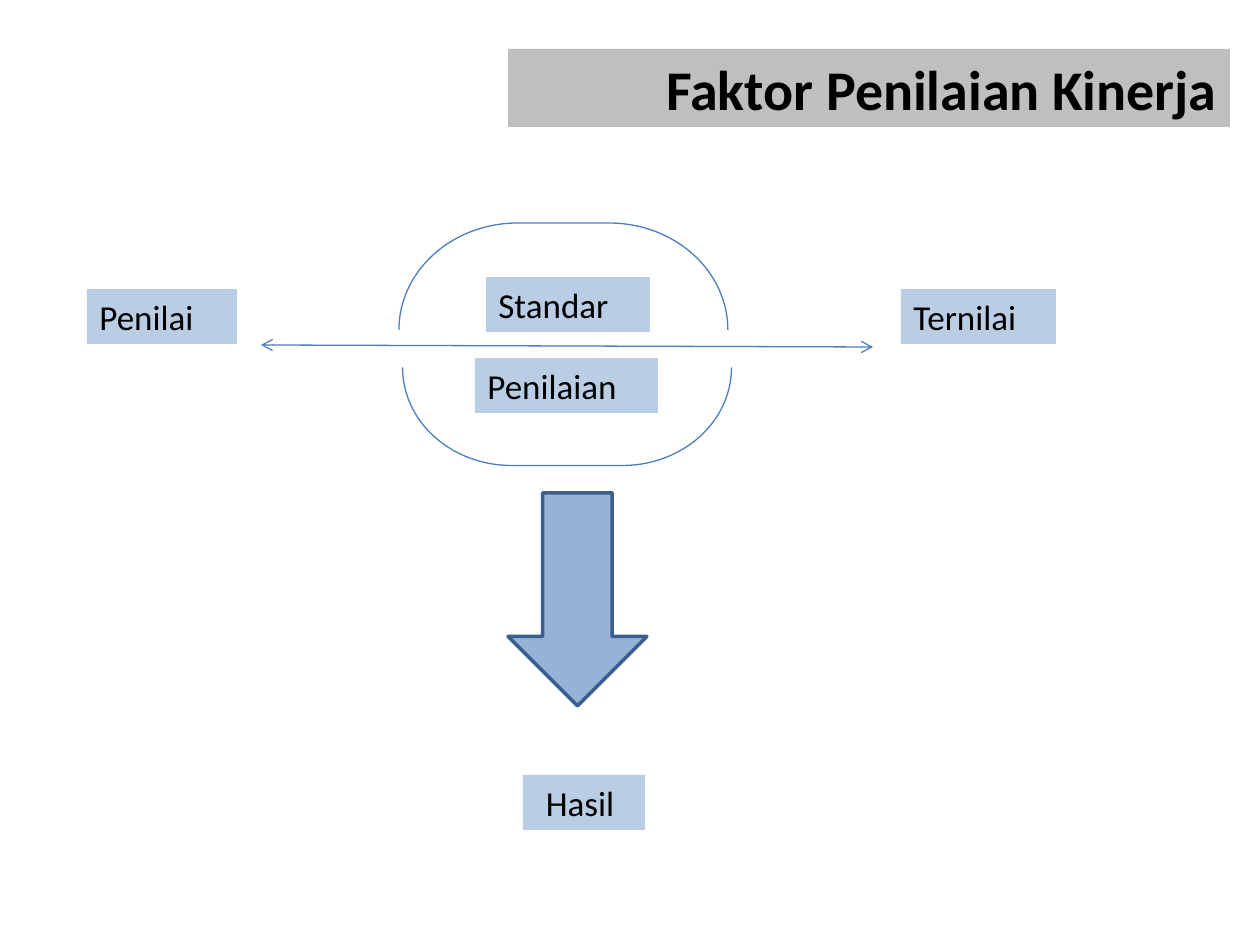
from pptx import Presentation
from pptx import util as u
from pptx.dml.color import RGBColor
from pptx.enum import shapes, text
from pptx.oxml.ns import qn
from lxml import etree

PX = 914400 / 126
FONT = "Calibri"
BLACK = RGBColor(0x00, 0x00, 0x00)
GREY = RGBColor(0xBF, 0xBF, 0xBF)
PALE_BLUE = RGBColor(0xB9, 0xCD, 0xE5)
MID_BLUE = RGBColor(0x95, 0xB3, 0xD7)
LINE_BLUE = RGBColor(0x4B, 0x7E, 0xBC)
DARK_BLUE = RGBColor(0x3A, 0x5F, 0x8C)
LABEL_HEIGHT = 55
BRACKET_SPAN = 329


def px(*lengths):
    return [u.Emu(round(length * PX)) for length in lengths]


def add_label(page, words, left, top, width, height=LABEL_HEIGHT, fill=PALE_BLUE,
              size=20, bold=False, align=text.PP_ALIGN.LEFT):
    box = page.shapes.add_textbox(*px(left, top, width, height))
    box.fill.solid()
    box.fill.fore_color.rgb = fill
    frame = box.text_frame
    frame.word_wrap = True
    frame.vertical_anchor = text.MSO_ANCHOR.MIDDLE
    para = frame.paragraphs[0]
    para.text = words
    para.alignment = align
    font = para.font
    font.name, font.size, font.bold = FONT, u.Pt(size), bold
    font.color.rgb = BLACK


def set_line(item, color, width):
    item.line.color.rgb = color
    item.line.width = u.Pt(width)


def add_double_arrow(page, x1, y1, x2, y2):
    arrow = page.shapes.add_connector(shapes.MSO_CONNECTOR.STRAIGHT, *px(x1, y1, x2, y2))
    set_line(arrow, LINE_BLUE, 0.75)
    for end in ("a:headEnd", "a:tailEnd"):
        etree.SubElement(arrow.line._get_or_add_ln(), qn(end), type="arrow")
    etree.SubElement(arrow._element.spPr, qn("a:effectLst"))


def add_bracket(page, left, top, depth, opens_down=False):
    """Draw a quarter-turned bracket; left and top are those before turning."""
    bracket = page.shapes.add_shape(
        shapes.MSO_SHAPE.RIGHT_BRACKET, *px(left, top, depth, BRACKET_SPAN))
    bracket.adjustments[0] = 1.11
    bracket.rotation = 90
    if opens_down:
        bracket._element.spPr.find(qn("a:xfrm")).set("flipH", "1")
    bracket.shadow.inherit = False
    bracket.fill.background()
    set_line(bracket, LINE_BLUE, 0.75)


def add_down_arrow(page, left, top, width, height):
    arrow = page.shapes.add_shape(
        shapes.MSO_SHAPE.DOWN_ARROW, *px(left, top, width, height))
    arrow.shadow.inherit = False
    arrow.fill.solid()
    arrow.fill.fore_color.rgb = MID_BLUE
    set_line(arrow, DARK_BLUE, 2)


def main():
    deck = Presentation()
    deck.slide_width, deck.slide_height = u.Inches(10), u.Inches(7.5)
    page = deck.slides.add_slide(deck.slide_layouts[6])

    # Title
    add_label(page, "Faktor Penilaian Kinerja", 508, 49, 722, 78, fill=GREY,
              size=32, bold=True, align=text.PP_ALIGN.RIGHT)

    # Assessor and assessed, joined across the standard
    add_label(page, "Penilai", 87, 289, 150)
    add_label(page, "Ternilai", 901, 289, 155)
    add_label(page, "Penilaian", 475, 358, 183)
    add_double_arrow(page, 261, 345, 873, 347)
    add_label(page, "Standar", 486, 277, 164)
    add_bracket(page, 518, 252, 98)
    add_bracket(page, 510, 112, 107, opens_down=True)

    # Result
    add_down_arrow(page, 508, 493, 139, 213)
    add_label(page, "Hasil ", 523, 775, 122, align=text.PP_ALIGN.CENTER)

    deck.save("out.pptx")


if __name__ == "__main__":
    main()
